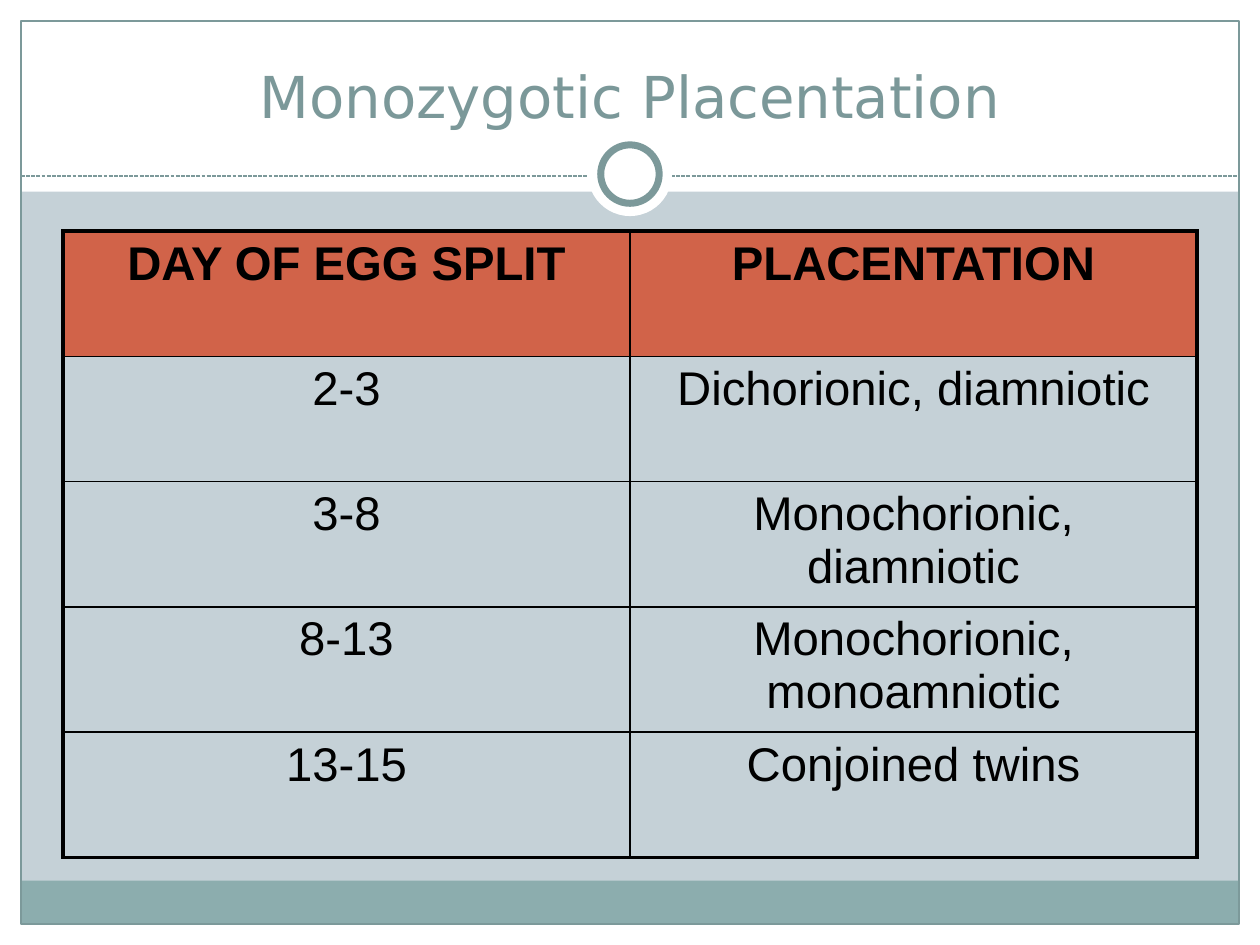
"""Build the Monozygotic Placentation slide with its table of egg split days."""
from dataclasses import dataclass

from lxml import etree
from pptx import Presentation
from pptx.dml.color import RGBColor
from pptx.enum import dml, shapes, text
from pptx.oxml import ns
from pptx.util import Pt


@dataclass(frozen=True)
class Theme:
    background: str = "C5D1D7"
    white: str = "FFFFFF"
    footer: str = "8CADAE"
    outline: str = "7C999A"
    title: str = "7B9899"
    header: str = "D16349"
    ink: str = "000000"
    title_font: str = "DejaVu Sans"
    table_font: str = "Arial"
    title_size: float = 33
    table_size: float = 27
    thin: float = 1
    thick: float = 2.25


theme = Theme()


def add_panel(kind, box, fill=None, line_width=None):
    shape = slide.shapes.add_shape(kind, *map(Pt, box))
    shape.shadow.inherit = False
    if fill:
        shape.fill.solid()
        shape.fill.fore_color.rgb = RGBColor.from_string(fill)
    else:
        shape.fill.background()
    if line_width:
        shape.line.color.rgb = RGBColor.from_string(theme.outline)
        shape.line.width = Pt(line_width)
    else:
        shape.line.fill.background()


def set_borders(cell, widths):
    properties = cell._tc.get_or_add_tcPr()
    for position, (side, width) in enumerate(widths.items()):
        line = etree.Element(ns.qn(f"a:ln{side}"), w=str(Pt(width)))
        fill = etree.SubElement(line, ns.qn("a:solidFill"))
        etree.SubElement(fill, ns.qn("a:srgbClr"), val=theme.ink)
        properties.insert(position, line)


presentation = Presentation()
presentation.slide_width, presentation.slide_height = Pt(720), Pt(540)
slide = presentation.slides.add_slide(presentation.slide_layouts[5])
slide.background.fill.solid()
slide.background.fill.fore_color.rgb = RGBColor.from_string(theme.background)

rectangle, oval = shapes.MSO_SHAPE.RECTANGLE, shapes.MSO_SHAPE.OVAL
margin = 12
for box in (
    (0, 540 - margin, 720, margin),
    (0, 0, 720, 109.5),
    (0, 0, margin, 540),
    (720 - margin, 0, margin, 540),
):
    add_panel(rectangle, box, theme.white)
add_panel(rectangle, (margin, 503.3, 720 - 2 * margin, 24.5), theme.footer)
add_panel(rectangle, (margin, margin, 720 - 2 * margin, 540 - 2 * margin), line_width=0.75)

divider = slide.shapes.add_connector(
    shapes.MSO_CONNECTOR.STRAIGHT, Pt(margin), Pt(100.6), Pt(720 - margin), Pt(100.6)
)
divider.line.color.rgb = RGBColor.from_string(theme.outline)
divider.line.width = Pt(0.75)
divider.line.dash_style = dml.MSO_LINE.SQUARE_DOT
etree.SubElement(divider._element.spPr, ns.qn("a:effectLst"))

for diameter, line_width in ((48, None), (33.4, 4)):
    box = (360 - diameter / 2, 99.5 - diameter / 2, diameter, diameter)
    add_panel(oval, box, theme.white, line_width)

title = slide.shapes.title
title.left, title.top, title.width, title.height = Pt(24), Pt(18), Pt(672), Pt(60)
title.text_frame.text = "Monozygotic Placentation"
title.text_frame.vertical_anchor = text.MSO_ANCHOR.BOTTOM
title.text_frame.auto_size = text.MSO_AUTO_SIZE.NONE
paragraph = title.text_frame.paragraphs[0]
paragraph.alignment = text.PP_ALIGN.CENTER
paragraph.font.name = theme.title_font
paragraph.font.size = Pt(theme.title_size)
paragraph.font.color.rgb = RGBColor.from_string(theme.title)
slide.shapes._spTree.append(title._element)

rows = (
    ("DAY OF EGG SPLIT", "PLACENTATION"),
    ("2-3", "Dichorionic, diamniotic"),
    ("3-8", "Monochorionic, diamniotic"),
    ("8-13", "Monochorionic, monoamniotic"),
    ("13-15", "Conjoined twins"),
)
row_height = 71.6
table = slide.shapes.add_table(
    len(rows), 2, Pt(36), Pt(132), Pt(648), Pt(row_height * len(rows))
).table
table.first_row = table.horz_banding = False
for row_index, row in enumerate(rows):
    table.rows[row_index].height = Pt(row_height)
    for column_index, words in enumerate(row):
        cell = table.cell(row_index, column_index)
        cell.text = words
        if row_index == 0:
            cell.fill.solid()
            cell.fill.fore_color.rgb = RGBColor.from_string(theme.header)
        else:
            cell.fill.background()
        paragraph = cell.text_frame.paragraphs[0]
        paragraph.alignment = text.PP_ALIGN.CENTER
        paragraph.font.name = theme.table_font
        paragraph.font.size = Pt(theme.table_size)
        paragraph.font.bold = row_index == 0
        paragraph.font.color.rgb = RGBColor.from_string(theme.ink)
        outer_sides = {
            "L": column_index == 0,
            "R": column_index == len(row) - 1,
            "T": row_index == 0,
            "B": row_index == len(rows) - 1,
        }
        set_borders(
            cell,
            {side: theme.thick if outer else theme.thin for side, outer in outer_sides.items()},
        )

presentation.save("out.pptx")
